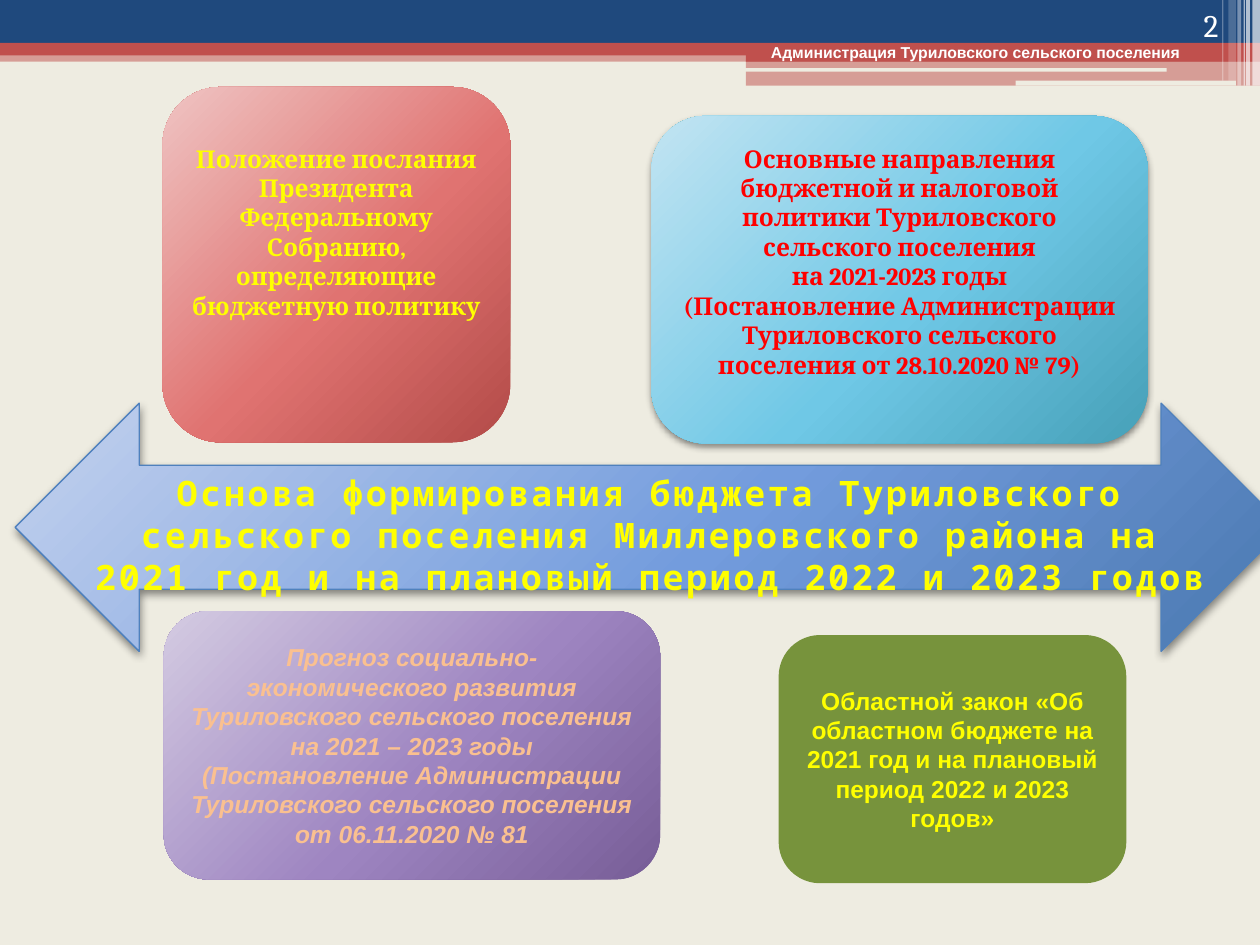
"""Build the slide on the basis for forming a rural settlement's budget."""
from pptx import Presentation
from pptx.dml.color import RGBColor
from pptx.enum.shapes import MSO_SHAPE as SHAPE
from pptx.enum.text import MSO_ANCHOR as ANCHOR, PP_ALIGN as ALIGN
from pptx.oxml import parse_xml
from pptx.oxml.ns import nsdecls, qn
from pptx.util import Inches, Pt

CREAM = RGBColor(0xEE, 0xEC, 0xE1)
NAVY = RGBColor(0x1F, 0x49, 0x7D)
BRICK = RGBColor(0xC0, 0x50, 0x4D)
WHITE = RGBColor(0xFF, 0xFF, 0xFF)
YELLOW = RGBColor(0xFF, 0xFF, 0x00)
RED = RGBColor(0xFF, 0x00, 0x00)
PEACH = RGBColor(0xFA, 0xC0, 0x90)
OLIVE = RGBColor(0x77, 0x93, 0x3C)
BLUE = RGBColor(0x4F, 0x81, 0xBD)

ROSE_GRADIENT = ("EFC4C3", "E07371", "B34B48")
SKY_GRADIENT = ("C2E4F2", "6FC8E6", "46A0B8")
VIOLET_GRADIENT = ("D4CBE2", "9E85C1", "775D97")
BLUE_GRADIENT = ("C4D2EE", "739CDD", "4A78B0")
STOPS = (0, 55, 100)

HEADER_BANDS = [
    ((0, 0.4, 10, 0.09), BRICK, 50),
    ((0, 0, 10, 0.34), NAVY, 100),
    ((0, 0.34, 10, 0.1), BRICK, 100),
    ((5.92, 0.39, 4.08, 0.1), BRICK, 100),
    ((5.92, 0.48, 4.08, 0.2), BRICK, 50),
    ((5.91, 0.54, 3.35, 0.03), CREAM, 100),
    ((8.06, 0.64, 1.75, 0.04), CREAM, 100),
]
STRIPES = [
    (9.94, 0.06, 0.68, 65),
    (9.89, 0.03, 0.68, 65),
    (9.87, 0.01, 0.68, 60),
    (9.82, 0.03, 0.68, 40),
    (9.75, 0.06, 0.64, 20),
    (9.7, 0.01, 0.64, 30),
]
ORGANISATION = "Администрация Туриловского сельского поселения"
SLIDE_NUMBER = "2"
TITLE = ("Основа формирования бюджета Туриловского сельского поселения "
         "Миллеровского района на 2021 год и на плановый период 2022 и 2023 годов")
SOURCES = [
    dict(box=(1.29, 0.69, 2.76, 2.82), fill=ROSE_GRADIENT, shadow=False,
         lines=["Положение послания Президента Федеральному Собранию, "
                "определяющие бюджетную политику"],
         style=dict(font="Cambria", color=YELLOW, bottom=0.57)),
    dict(box=(5.17, 0.92, 3.94, 2.6), fill=SKY_GRADIENT, shadow=True,
         lines=["Основные направления бюджетной и налоговой политики "
                "Туриловского сельского поселения",
                "на 2021-2023 годы",
                "(Постановление Администрации Туриловского сельского "
                "поселения от 28.10.2020 № 79)"],
         style=dict(font="Cambria", color=RED, bottom=0.34)),
    dict(box=(1.3, 4.85, 3.94, 2.13), fill=VIOLET_GRADIENT, shadow=False,
         lines=["Прогноз социально-экономического развития Туриловского "
                "сельского поселения на 2021 – 2023 годы (Постановление "
                "Администрации Туриловского сельского поселения "
                "от 06.11.2020 № 81"],
         style=dict(font="Arial", color=PEACH, italic=True)),
    dict(box=(6.18, 5.04, 2.76, 1.97), fill=OLIVE, shadow=False,
         lines=["Областной закон «Об областном бюджете на 2021 год и на "
                "плановый период 2022 и 2023 годов»"],
         style=dict(font="Arial", color=YELLOW)),
]
ARROW = (0.12, 3.2, 10.08, 1.97)


def write(sp, lines, font="Arial", size=14, color=WHITE, bold=True, italic=False,
          align=ALIGN.CENTER, anchor=ANCHOR.MIDDLE, bottom=0.05, spacing=0, wrap=True):
    tf = sp.text_frame
    tf.word_wrap = wrap
    tf.vertical_anchor = anchor
    tf.margin_left = tf.margin_right = Inches(0.1)
    tf.margin_top, tf.margin_bottom = Inches(0.05), Inches(bottom)
    for i, line in enumerate(lines):
        p = tf.paragraphs[0] if i == 0 else tf.add_paragraph()
        p.alignment = align
        r = p.add_run()
        r.text = line
        r.font.name, r.font.size = font, Pt(size)
        r.font.bold, r.font.italic = bold, italic
        r.font.color.rgb = color
        if spacing:
            r.font._element.set("spc", str(int(spacing * 100)))


def add_filled(slide, kind, box, fill, alpha=100, line=None, shadow=False):
    sp = slide.shapes.add_shape(kind, *map(Inches, box))
    sp.shadow.inherit = False
    sp.fill.solid()
    props = sp._element.spPr
    solid = props.find(qn("a:solidFill"))
    if isinstance(fill, RGBColor):
        sp.fill.fore_color.rgb = fill
        if alpha < 100:
            solid[0].append(parse_xml(f'<a:alpha {nsdecls("a")} val="{alpha * 1000}"/>'))
    else:
        stops = "".join(f'<a:gs pos="{pos * 1000}"><a:srgbClr val="{color}"/></a:gs>'
                        for pos, color in zip(STOPS, fill))
        props.replace(solid, parse_xml(
            f'<a:gradFill {nsdecls("a")} rotWithShape="1"><a:gsLst>{stops}</a:gsLst>'
            '<a:path path="circle"><a:fillToRect l="-40000" t="-90000" '
            'r="140000" b="190000"/></a:path></a:gradFill>'))
    if line is None:
        sp.line.fill.background()
    else:
        sp.line.color.rgb, sp.line.width = line, Pt(0.75)
    if shadow:
        props.find(qn("a:effectLst")).append(parse_xml(
            f'<a:outerShdw {nsdecls("a")} blurRad="{Pt(4)}" dist="{Pt(2)}" '
            'dir="5400000" rotWithShape="0"><a:srgbClr val="000000">'
            '<a:alpha val="45000"/></a:srgbClr></a:outerShdw>'))
    return sp


def add_header(slide):
    for box, color, alpha in HEADER_BANDS:
        add_filled(slide, SHAPE.RECTANGLE, box, color, alpha)
    for left, width, height, alpha in STRIPES:
        add_filled(slide, SHAPE.RECTANGLE, (left, 0, width, height), WHITE, alpha)
    sp = slide.shapes.add_textbox(*map(Inches, (6.02, 0.29, 3.7, 0.25)))
    write(sp, [ORGANISATION], size=9, align=ALIGN.LEFT, anchor=ANCHOR.TOP)


def add_title_arrow(slide):
    add_filled(slide, SHAPE.LEFT_RIGHT_ARROW, ARROW, BLUE_GRADIENT, line=BLUE, shadow=True)
    left, top, width, height = ARROW
    inset = height / 4
    title = slide.shapes.title
    title.left, title.top = Inches(left + inset), Inches(top + inset)
    title.width, title.height = Inches(width - 2 * inset), Inches(height / 2)
    write(title, [TITLE], font="Noto Sans Mono", size=20, color=YELLOW,
          anchor=ANCHOR.TOP, spacing=1.5)
    slide.shapes._spTree.append(title._element)


def main():
    prs = Presentation()
    prs.slide_width, prs.slide_height = Inches(10), Inches(7.5)
    slide = prs.slides.add_slide(prs.slide_layouts[5])
    slide.background.fill.solid()
    slide.background.fill.fore_color.rgb = CREAM
    add_header(slide)
    for source in SOURCES:
        sp = add_filled(slide, SHAPE.ROUNDED_RECTANGLE, source["box"], source["fill"],
                        shadow=source["shadow"])
        write(sp, source["lines"], **source["style"])
    add_title_arrow(slide)
    sp = slide.shapes.add_textbox(*map(Inches, (8.94, 0, 0.83, 0.4)))
    write(sp, [SLIDE_NUMBER], font="Cambria", size=18, bold=False,
          align=ALIGN.RIGHT, anchor=ANCHOR.BOTTOM)
    prs.save("out.pptx")


if __name__ == "__main__":
    main()
